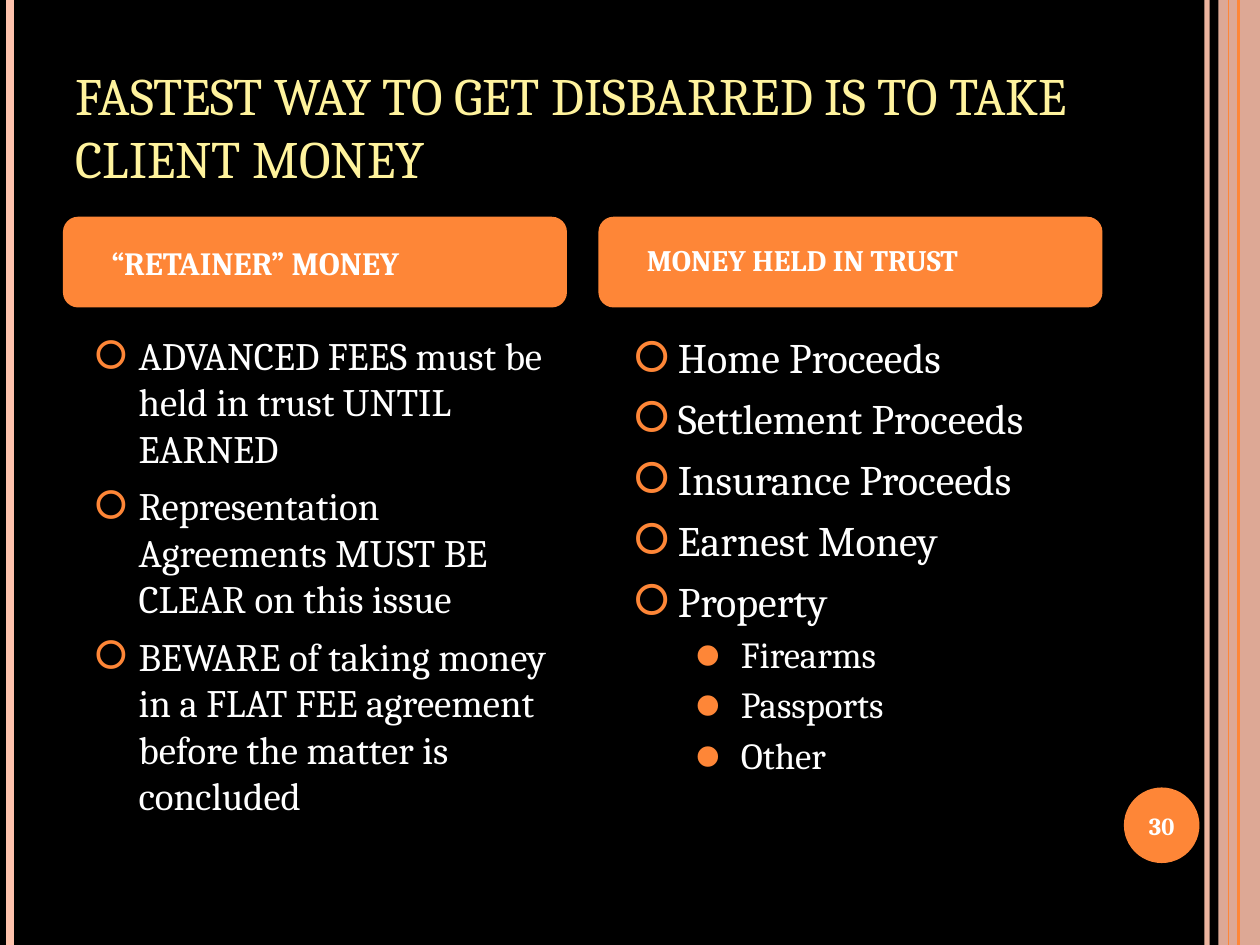
from lxml.etree import SubElement
from pptx import Presentation
from pptx.dml.color import RGBColor
from pptx.enum.shapes import MSO_CONNECTOR, MSO_SHAPE
from pptx.enum.text import MSO_ANCHOR, MSO_AUTO_SIZE, PP_ALIGN
from pptx.oxml.ns import qn
from pptx.util import Inches, Pt

COLOURS = {
    "background": "000000",
    "accent": "FE8637",
    "pale": "FEC2AC",
    "title": "FFF39D",
    "text": "FFFFFF",
}
FONT = "Cambria"
PAGE_HEIGHT = 7.5

# x position, colour, width in points, opacity in percent
RULES = [
    (9.58, "pale", 3, 93),
    (0.08, "pale", 4.5, 100),
    (9.83, "accent", 1.5, 100),
    (9.75, "accent", 0.75, 100),
]

# Per list level: bullet, left margin, hanging indent, space before
LEVELS = [("🞆", 0.5, 0.34, 6), ("⚫", 1, 0.35, 3.6)]

RETAINER_ITEMS = [
    (0, "ADVANCED FEES must be held in trust UNTIL EARNED"),
    (0, "Representation Agreements MUST BE CLEAR on this issue"),
    (0, "BEWARE of taking money in a FLAT FEE agreement before the matter is concluded"),
]
TRUST_ITEMS = [
    (0, "Home Proceeds"),
    (0, "Settlement Proceeds"),
    (0, "Insurance Proceeds"),
    (0, "Earnest Money"),
    (0, "Property"),
    (1, "Firearms"),
    (1, "Passports"),
    (1, "Other"),
]


def colour(name):
    return RGBColor.from_string(COLOURS[name])


def set_opacity(fill_parent, percent):
    if percent < 100:
        tone = next(fill_parent.iter(qn("a:srgbClr")))
        SubElement(tone, qn("a:alpha"), val=str(percent * 1000))


def add_rule(page, x, tone, width, opacity):
    """Draw a vertical line over the full page height."""
    rule = page.shapes.add_connector(
        MSO_CONNECTOR.STRAIGHT, Inches(x), 0, Inches(x), Inches(PAGE_HEIGHT))
    rule.line.width = Pt(width)
    rule.line.color.rgb = colour(tone)
    properties = rule._element.spPr
    set_opacity(properties, opacity)
    SubElement(properties, qn("a:effectLst"))


def add_block(page, kind, bounds, tone, opacity=100):
    """Add a filled shape without outline or shadow."""
    block = page.shapes.add_shape(kind, *map(Inches, bounds))
    block.shadow.inherit = False
    block.fill.solid()
    block.fill.fore_color.rgb = colour(tone)
    block.line.fill.background()
    set_opacity(block._element.spPr, opacity)
    return block


def add_span(para, text, size, tone="text", bold=False):
    span = para.add_run()
    span.text = text
    formats = {"name": FONT, "size": Pt(size), "bold": bold}
    for attribute, value in formats.items():
        setattr(span.font, attribute, value)
    span.font.color.rgb = colour(tone)


def set_indent(para, margin, hanging):
    properties = para._p.get_or_add_pPr()
    properties.set("marL", str(Inches(margin)))
    properties.set("indent", str(-Inches(hanging)))
    return properties


def place(box, bounds, anchor):
    """Move a placeholder and fix how its text sits."""
    for side, value in zip(("left", "top", "width", "height"), bounds):
        setattr(box, side, Inches(value))
    formats = {
        "word_wrap": True,
        "auto_size": MSO_AUTO_SIZE.NONE,
        "vertical_anchor": anchor,
    }
    for attribute, value in formats.items():
        setattr(box.text_frame, attribute, value)


def fill_title(box, text):
    place(box, (0.5, 0.3, 8.25, 1.25), MSO_ANCHOR.BOTTOM)
    para = box.text_frame.paragraphs[0]
    para.alignment = PP_ALIGN.LEFT
    add_span(para, text, 30, "title")


def fill_list(box, left, items, sizes):
    place(box, (left, 2.58, 4, 4.25), MSO_ANCHOR.TOP)
    frame = box.text_frame
    for number, (level, text) in enumerate(items):
        para = frame.add_paragraph() if number else frame.paragraphs[0]
        bullet, margin, hanging, space = LEVELS[level]
        para.level = level
        para.space_before = Pt(space if number else 0)
        properties = set_indent(para, margin, hanging)
        tint = SubElement(properties, qn("a:buClr"))
        SubElement(tint, qn("a:srgbClr"), val=COLOURS["accent"])
        SubElement(properties, qn("a:buChar"), char=bullet)
        add_span(para, text, sizes[level])


def add_heading(page, left, text, size, spacing):
    heading = add_block(
        page, MSO_SHAPE.ROUNDED_RECTANGLE, (left, 1.72, 4, 0.72), "accent")
    heading.text_frame.word_wrap = True
    heading.text_frame.vertical_anchor = MSO_ANCHOR.MIDDLE
    para = heading.text_frame.paragraphs[0]
    para.alignment = PP_ALIGN.LEFT
    para.line_spacing = spacing
    set_indent(para, 0.5, 0.25)
    add_span(para, text, size, bold=True)


def add_page_number(page, number):
    badge = add_block(page, MSO_SHAPE.OVAL, (8.92, 6.25, 0.6, 0.6), "accent")
    frame = badge.text_frame
    for side in ("left", "top", "right", "bottom"):
        setattr(frame, f"margin_{side}", 0)
    frame.vertical_anchor = MSO_ANCHOR.MIDDLE
    para = frame.paragraphs[0]
    para.alignment = PP_ALIGN.CENTER
    add_span(para, number, 14, bold=True)


def main():
    deck = Presentation()
    deck.slide_width = Inches(10)
    deck.slide_height = Inches(PAGE_HEIGHT)
    page = deck.slides.add_slide(deck.slide_layouts.get_by_name("Two Content"))
    page.background.fill.solid()
    page.background.fill.fore_color.rgb = colour("background")

    add_block(page, MSO_SHAPE.RECTANGLE, (9.67, 0, 0.33, PAGE_HEIGHT), "pale", 87)
    for rule in RULES:
        add_rule(page, *rule)
    add_page_number(page, "30")

    title, retainer_list, trust_list = page.placeholders
    fill_title(title, "FASTEST WAY TO GET DISBARRED IS TO TAKE CLIENT MONEY")
    add_heading(page, 0.5, "“RETAINER” MONEY", 18.5, 1)
    add_heading(page, 4.75, "MONEY HELD IN TRUST", 17, 0.9)
    fill_list(retainer_list, 0.5, RETAINER_ITEMS, [22.2])
    fill_list(trust_list, 4.78, TRUST_ITEMS, [24, 21])

    deck.save("out.pptx")


if __name__ == "__main__":
    main()
